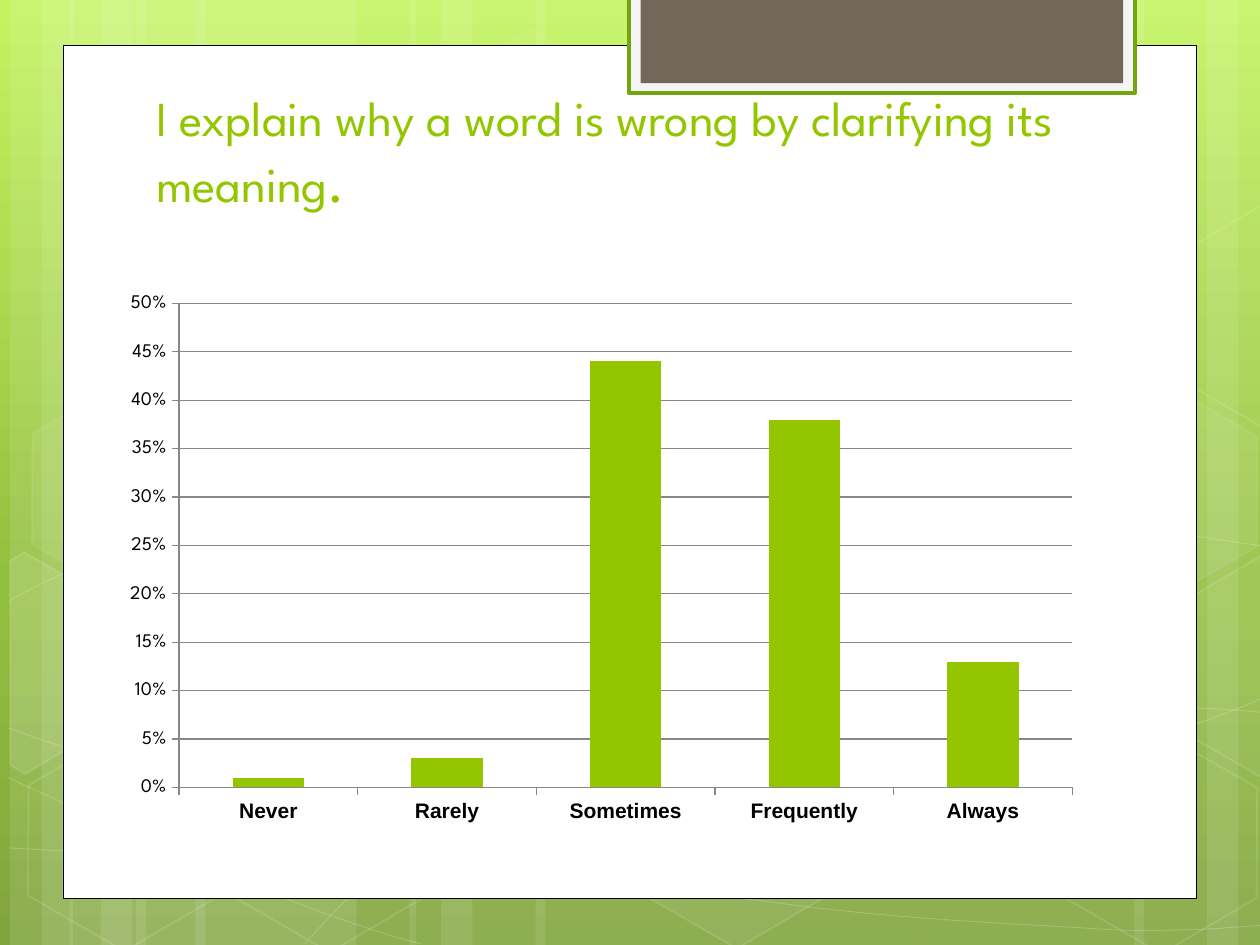
from copy import deepcopy
from dataclasses import dataclass
from math import cos, radians, sin

from lxml.etree import SubElement
from pptx import Presentation
from pptx.chart.data import CategoryChartData
from pptx.dml.color import RGBColor
from pptx.enum.chart import XL_CHART_TYPE, XL_TICK_MARK
from pptx.enum.shapes import MSO_SHAPE
from pptx.enum.text import MSO_ANCHOR, MSO_AUTO_SIZE, PP_ALIGN
from pptx.oxml import parse_xml
from pptx.oxml.ns import nsdecls, qn
from pptx.util import Inches, Pt

COLUMNS, ROWS = 100, 75
CELL = Inches(10) // COLUMNS
TILT = 30


@dataclass(frozen=True)
class Theme:
    white: str = "FFFFFF"
    black: str = "000000"
    green: str = "94C600"
    frame: str = "74A510"
    tab: str = "F5F5F5"
    taupe: str = "71685A"
    axis: str = "878787"
    background: tuple = ((0, "C3F35F"), (0.62, "93BF3F"), (1, "81A53E"))
    heading_font: str = "League Spartan"
    label_font: str = "Arial"
    title_size: float = 27.9
    stop_size: float = 32.4
    value_size: float = 11
    category_size: float = 12


@dataclass(frozen=True)
class Box:
    """Place and size in grid cells."""
    left: float
    top: float
    width: float
    height: float

    def lengths(self) -> list[int]:
        return [round(value * CELL) for value in (self.left, self.top, self.width, self.height)]


@dataclass(frozen=True)
class Paint:
    fill: str | None = None
    fill_opacity: int = 100
    line: str | None = None
    line_width: float = 1
    line_opacity: int = 100


@dataclass(frozen=True)
class Hexagon:
    left: float
    top: float
    paint: Paint


@dataclass(frozen=True)
class CutHexagon:
    """A tilted hexagon trimmed at the slide's edge: its centre and its corners."""
    centre: tuple
    corners: tuple
    paint: Paint


THEME = Theme()


def glass(fill_opacity: int, line_opacity: int = 12) -> Paint:
    return Paint(THEME.white if fill_opacity else None, fill_opacity, THEME.white, 1, line_opacity)


STRIPE = Paint(THEME.white, 10)
THREAD = Paint(line=THEME.white, line_width=0.5, line_opacity=20)
STRIPES = ((10.8, 17.5), (0.8, 5), (3.3, 8.3), (15.5, 17.5), (5.5, 5), (8, 8.3),
           (73.3, 17.5), (95.8, 5), (90, 8.3), (42.5, 30.8), (32.5, 5), (35, 8.3))
# Each thread is a start point followed by three points for every Bezier segment.
THREADS = (
    ((0.7, 67.3), (6.1, 67.6), (11.5, 67.9), (19, 67.8), (26.5, 67.7), (35.8, 67.5),
     (45.8, 66.5), (55.8, 65.5), (70, 63.6), (79.2, 61.7), (88.3, 59.8), (97.7, 56.8),
     (100.7, 55.1)),
    ((0.7, 47.7), (3.6, 46.1), (6.5, 44.6), (12.1, 43.1), (17.8, 41.6), (25.9, 39.4),
     (34.7, 38.7), (43.6, 38), (54.4, 37.9), (65.4, 38.7), (76.4, 39.5), (94.7, 42.6),
     (100.7, 43.4)),
    ((0.6, 61.7), (12.7, 67.2), (24.7, 72.7), (33.4, 74.9)),
    ((0.7, 57.8), (3.8, 58.9), (7, 60), (12.8, 61.6), (18.6, 63.1), (27.3, 65.6),
     (35.7, 67.3), (44, 69), (54.5, 70.8), (62.8, 71.8), (71.1, 72.9), (80, 73.3),
     (85.3, 73.6), (90.5, 74), (91.9, 73.8), (94.5, 73.8), (97.1, 73.7), (98.9, 73.5),
     (100.7, 73.4)),
    ((24.2, 74.9), (26, 72.9), (27.8, 70.9), (30.2, 69.1), (32.6, 67.3), (36, 65.3),
     (38.8, 63.9), (41.6, 62.5), (43.3, 61.9), (47, 60.9), (50.6, 59.9), (57.3, 58.5),
     (60.8, 57.8), (64.4, 57.1), (64.9, 57.1), (68, 56.9), (71.1, 56.6), (76, 56.3),
     (79.4, 56.2), (82.9, 56.1), (88.6, 56.2), (88.6, 56.2), (90.8, 56.2), (93.1, 56.2),
     (95.3, 56.2), (97.1, 56.3), (98.8, 56.4), (99.7, 56.5), (100.6, 56.6), (100.3, 56.5),
     (100.6, 56.6)),
)
HEXAGONS = (
    Hexagon(33.4, 3.6, glass(4, 8)),
    Hexagon(49.7, 58.9, glass(6)),
    CutHexagon((3.6, 53.5), ((0.8, 44.5), (1.9, 43.8), (9.6, 48.2), (9.5, 57), (2, 61.4),
                             (0.8, 60.7)), glass(10)),
    Hexagon(1.1, 59.1, glass(0)),
    Hexagon(1.4, 31.2, glass(7, 8)),
    Hexagon(17.4, 59.2, glass(0)),
    Hexagon(75.3, 45.3, glass(10)),
    Hexagon(83.4, 59.3, glass(0)),
    Hexagon(83.4, 31.4, glass(7, 8)),
    CutHexagon((98.5, 52), ((92.6, 48.5), (100.1, 44.1), (100.9, 44.6), (100.9, 61.3),
                            (100.2, 61.7), (92.6, 57.3)), glass(4)),
    CutHexagon((98.5, 24.1), ((92.6, 20.7), (100.1, 16.3), (101, 16.8), (100.9, 33.5),
                              (100.2, 33.9), (92.6, 29.5)), glass(0)),
)
PANELS = (
    (Box(5, 3.6, 90, 67.7), Paint(THEME.white, line=THEME.black, line_width=0.5)),
    (Box(49.9, -0.2, 40.2, 7.6), Paint(THEME.tab, line=THEME.frame, line_width=2)),
    (Box(50.85, -0.2, 38.3, 6.8), Paint(THEME.taupe)),
)
TITLE_BOX = Box(11.4, 7.5, 76.8, 10)
CHART_BOX = Box(7.5, 20, 85, 49.2)
PLOT_SHARES = {"x": 0.079, "y": 0.083, "w": 0.834, "h": 0.781}
ANSWERS = {"Never": 0.01, "Rarely": 0.03, "Sometimes": 0.44, "Frequently": 0.38, "Always": 0.13}


def set_opacity(element, percent: int) -> None:
    if percent < 100:
        for colour in element.iter(qn("a:srgbClr")):
            SubElement(colour, qn("a:alpha"), val=str(percent * 1000))


def apply_paint(shape, paint: Paint) -> None:
    shape.shadow.inherit = False
    properties = shape.element.spPr
    if paint.fill:
        shape.fill.solid()
        shape.fill.fore_color.rgb = RGBColor.from_string(paint.fill)
        set_opacity(properties, paint.fill_opacity)
    else:
        shape.fill.background()
    if paint.line:
        shape.line.color.rgb = RGBColor.from_string(paint.line)
        shape.line.width = Pt(paint.line_width)
        set_opacity(properties.find(qn("a:ln")), paint.line_opacity)
    else:
        shape.line.fill.background()


def draw_shape(slide, kind: MSO_SHAPE, box: Box, paint: Paint):
    shape = slide.shapes.add_shape(kind, *box.lengths())
    apply_paint(shape, paint)
    return shape


def draw_outline(slide, points, paint: Paint, close: bool):
    start, *others = [(round(x * CELL), round(y * CELL)) for x, y in points]
    builder = slide.shapes.build_freeform(*start)
    builder.add_line_segments(others, close=close)
    shape = builder.convert_to_shape()
    apply_paint(shape, paint)
    return shape


def draw_thread(slide, points: tuple) -> None:
    """Draw the points as lines, then join every three lines into one Bezier segment."""
    shape = draw_outline(slide, points, THREAD, close=False)
    lines = list(shape.element.iter(qn("a:lnTo")))
    for first in range(0, len(lines), 3):
        curve = SubElement(lines[first].getparent(), qn("a:cubicBezTo"))
        for line in lines[first:first + 3]:
            curve.append(line[0])
            line.getparent().remove(line)


def draw_hexagon(slide, hexagon: Hexagon | CutHexagon) -> None:
    if isinstance(hexagon, Hexagon):
        box = Box(hexagon.left, hexagon.top, 17.5, 15.2)
        shape = draw_shape(slide, MSO_SHAPE.HEXAGON, box, hexagon.paint)
        shape.adjustments[0] = 0.285
    else:
        (x0, y0), c, s = hexagon.centre, cos(radians(TILT)), sin(radians(TILT))
        upright = [(x0 + (x - x0) * c + (y - y0) * s, y0 - (x - x0) * s + (y - y0) * c)
                   for x, y in hexagon.corners]
        shape = draw_outline(slide, upright, hexagon.paint, close=True)
    shape.rotation = TILT


def paint_background(slide) -> None:
    fill = slide.background.fill
    fill.gradient()
    fill.gradient_angle = 270
    stop_list = next(slide.element.iter(qn("a:gsLst")))
    stop_list.insert(1, deepcopy(stop_list[0]))
    for stop, (position, colour) in zip(fill.gradient_stops, THEME.background):
        stop.position = position
        stop.color.rgb = RGBColor.from_string(colour)


def write_title(slide) -> None:
    title = slide.shapes.title
    slide.shapes.element.append(title.element)  # bring in front of the panels
    title.left, title.top, title.width, title.height = TITLE_BOX.lengths()
    frame = title.text_frame
    frame.text = "I explain why a word is wrong by clarifying its meaning"
    frame.word_wrap = True
    frame.auto_size = MSO_AUTO_SIZE.NONE
    frame.vertical_anchor = MSO_ANCHOR.BOTTOM
    paragraph = frame.paragraphs[0]
    paragraph.alignment = PP_ALIGN.LEFT
    paragraph.add_run().text = "."
    for run, size in zip(paragraph.runs, (THEME.title_size, THEME.stop_size)):
        run.font.name = THEME.heading_font
        run.font.size = Pt(size)
        run.font.color.rgb = RGBColor.from_string(THEME.green)


def format_axis(axis, font_name: str, size: float, bold: bool) -> None:
    axis.major_tick_mark = XL_TICK_MARK.OUTSIDE
    axis.format.line.color.rgb = RGBColor.from_string(THEME.axis)
    font = axis.tick_labels.font
    font.name, font.size, font.bold = font_name, Pt(size), bold
    font.color.rgb = RGBColor.from_string(THEME.black)


def draw_chart(slide) -> None:
    data = CategoryChartData(number_format="0%")
    data.categories = list(ANSWERS)
    data.add_series("Series 1", list(ANSWERS.values()))
    chart = slide.shapes.add_chart(XL_CHART_TYPE.COLUMN_CLUSTERED, *CHART_BOX.lengths(), data).chart
    chart.has_legend = chart.has_title = False
    chart.font.name, chart.font.size = THEME.heading_font, Pt(10)
    format_axis(chart.category_axis, THEME.label_font, THEME.category_size, True)
    values = chart.value_axis
    format_axis(values, THEME.heading_font, THEME.value_size, False)
    values.minimum_scale, values.maximum_scale, values.major_unit = 0, 0.5, 0.05
    values.tick_labels.number_format = "0%"
    values.tick_labels.number_format_is_linked = False
    values.major_gridlines.format.line.color.rgb = RGBColor.from_string(THEME.axis)
    plot = chart.plots[0]
    plot.gap_width, plot.vary_by_categories = 150, False
    fill = plot.series[0].format.fill
    fill.solid()
    fill.fore_color.rgb = RGBColor.from_string(THEME.green)
    modes = '<c:layoutTarget val="inner"/><c:xMode val="edge"/><c:yMode val="edge"/>'
    shares = "".join(f'<c:{name} val="{share}"/>' for name, share in PLOT_SHARES.items())
    plot_area = next(chart.element.iter(qn("c:plotArea")))
    for layout in plot_area.findall(qn("c:layout")):
        plot_area.remove(layout)
    plot_area.insert(0, parse_xml(f'<c:layout {nsdecls("c")}><c:manualLayout>{modes}{shares}'
                                  '</c:manualLayout></c:layout>'))


def main() -> None:
    presentation = Presentation()
    presentation.slide_width, presentation.slide_height = COLUMNS * CELL, ROWS * CELL
    slide = presentation.slides.add_slide(presentation.slide_layouts[5])
    paint_background(slide)
    for left, width in STRIPES:
        draw_shape(slide, MSO_SHAPE.RECTANGLE, Box(left, 0, width, ROWS), STRIPE)
    for thread in THREADS:
        draw_thread(slide, thread)
    for hexagon in HEXAGONS:
        draw_hexagon(slide, hexagon)
    for box, paint in PANELS:
        draw_shape(slide, MSO_SHAPE.RECTANGLE, box, paint)
    write_title(slide)
    draw_chart(slide)
    presentation.save("out.pptx")


if __name__ == "__main__":
    main()
